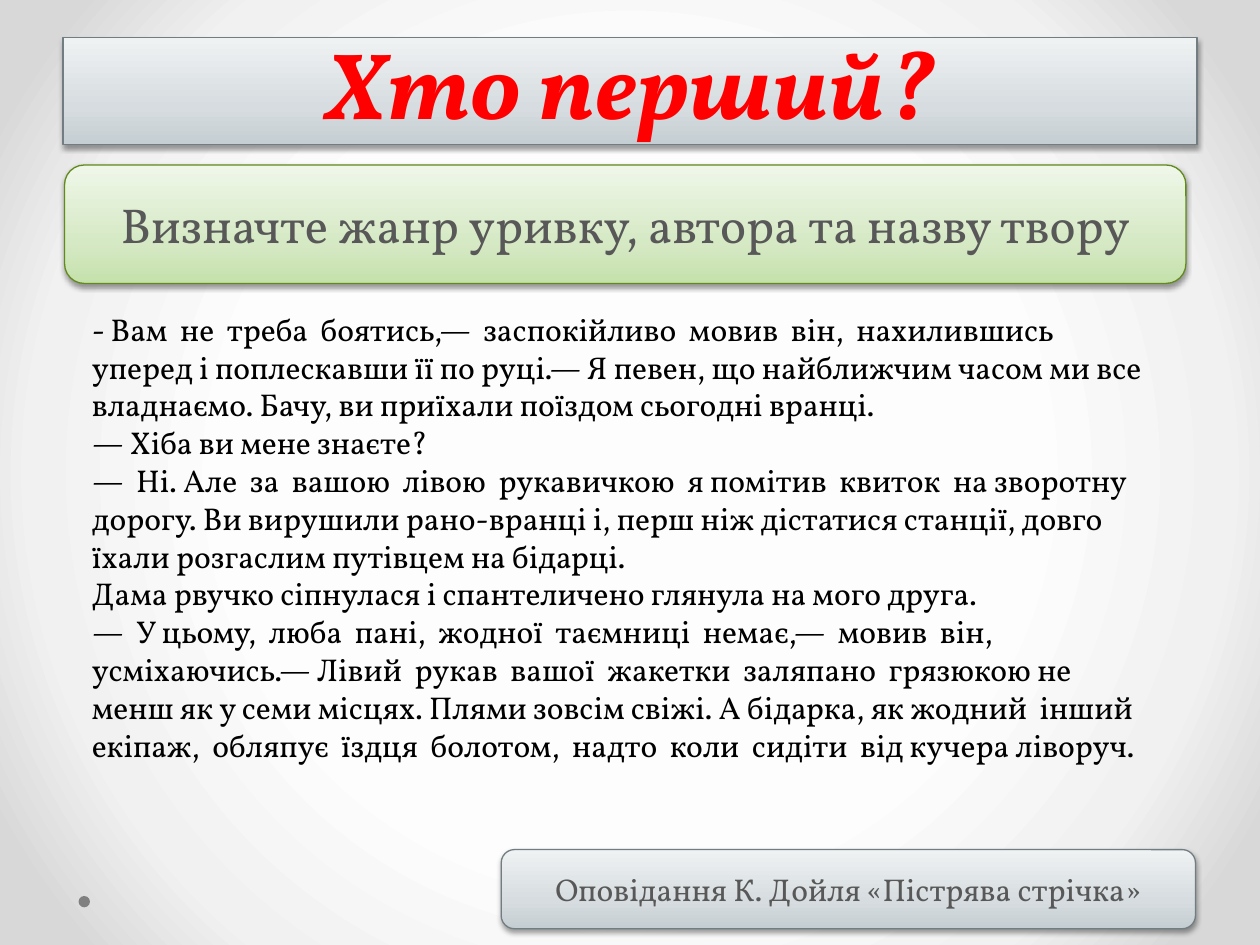
from dataclasses import dataclass
from lxml.etree import SubElement
from pptx import Presentation
from pptx.dml.color import RGBColor
from pptx.enum.shapes import MSO_SHAPE
from pptx.enum.text import MSO_ANCHOR, MSO_AUTO_SIZE, PP_ALIGN
from pptx.oxml.ns import qn
from pptx.util import Pt


@dataclass(frozen=True)
class Theme:
    font: str = "Vollkorn"
    title_size: int = 54
    task_size: int = 28
    body_size: int = 18
    red: str = "FF0000"
    grey: str = "585858"
    black: str = "000000"
    dot: str = "808080"
    backdrop: tuple = ((50, "FDFDFD"), (76, "F1F1F1"), (92, "D8D8D8"))
    steel: tuple = ((0, "C5CED2"), (35, "D6DCDF"), (100, "EFF2F3"))
    steel_line: str = "727D82"
    green: tuple = ((0, "C5E1AB"), (35, "D6E9C5"), (100, "EFF7E9"))
    green_line: str = "62891C"


T = Theme()

PASSAGE = [
    "- Вам  не  треба  боятись,—  заспокійливо  мовив  він,  нахилившись уперед і "
    "поплескавши її по руці.— Я певен, що найближчим часом ми все владнаємо. "
    "Бачу, ви приїхали поїздом сьогодні вранці.",
    "— Хіба ви мене знаєте?",
    "—  Ні. Але  за  вашою  лівою  рукавичкою  я помітив  квиток  на зворотну дорогу. "
    "Ви вирушили рано-вранці і, перш ніж дістатися станції, довго їхали розгаслим "
    "путівцем на бідарці.",
    "Дама рвучко сіпнулася і спантеличено глянула на мого друга.",
    "—  У цьому,  люба  пані,  жодної  таємниці  немає,—  мовив  він, усміхаючись.— "
    "Лівий  рукав  вашої  жакетки  заляпано  грязюкою не менш як у семи місцях. "
    "Плями зовсім свіжі. А бідарка, як жодний  інший  екіпаж,  обляпує  їздця  "
    "болотом,  надто  коли  сидіти  від кучера ліворуч.",
]


def add(parent, tag, **attrs):
    return SubElement(parent, qn(tag), {k: str(v) for k, v in attrs.items()})


def set_gradient(fill, element, stops, radial=False):
    """Gradient with any number of stops, upward or from the centre out."""
    fill.gradient()
    grad = element.find(".//" + qn("a:gradFill"))
    for child in list(grad):
        grad.remove(child)
    gs_list = add(grad, "a:gsLst")
    for pos, color in stops:
        add(add(gs_list, "a:gs", pos=pos * 1000), "a:srgbClr", val=color)
    if radial:
        focus = add(grad, "a:path", path="circle")
        add(focus, "a:fillToRect", **dict.fromkeys("ltrb", 50000))
    else:
        add(grad, "a:lin", ang=270 * 60000, scaled=0)


def place(shape, box):
    for name, value in zip(("left", "top", "width", "height"), box):
        setattr(shape, name, Pt(value))


def style_panel(sp, stops, line):
    """Gradient fill, thin outline and soft shadow below."""
    set_gradient(sp.fill, sp.element, stops)
    sp.line.color.rgb = RGBColor.from_string(line)
    sp.line.width = Pt(0.75)
    sp.shadow.inherit = False
    effects = sp.element.spPr.find(qn("a:effectLst"))
    shadow = add(effects, "a:outerShdw", blurRad=Pt(3.1), dist=Pt(1.6),
                 dir=90 * 60000, rotWithShape=0)
    add(add(shadow, "a:srgbClr", val="000000"), "a:alpha", val=38000)


def write(tf, texts, size, color, align, anchor, spacing=None, **font):
    tf.word_wrap = True
    tf.auto_size = MSO_AUTO_SIZE.NONE
    tf.vertical_anchor = anchor
    for i, text in enumerate(texts):
        p = tf.add_paragraph() if i else tf.paragraphs[0]
        p.alignment = align
        if spacing:
            p.line_spacing = Pt(spacing)
        r = p.add_run()
        r.text = text
        r.font.color.rgb = RGBColor.from_string(color)
        for name, value in dict(name=T.font, size=Pt(size), **font).items():
            setattr(r.font, name, value)


def add_title(s, box, text):
    sp = s.shapes.title
    place(sp, box)
    style_panel(sp, T.steel, T.steel_line)
    write(sp.text_frame, [text], T.title_size, T.red, PP_ALIGN.CENTER,
          MSO_ANCHOR.BOTTOM, spacing=58, bold=True, italic=True)


def add_panel(s, box, text, size, stops, line):
    sp = s.shapes.add_shape(MSO_SHAPE.ROUNDED_RECTANGLE, *map(Pt, box))
    style_panel(sp, stops, line)
    write(sp.text_frame, [text], size, T.grey, PP_ALIGN.CENTER, MSO_ANCHOR.MIDDLE)


def add_passage(s, box, texts):
    sp = s.shapes.add_textbox(*map(Pt, box))
    write(sp.text_frame, texts, T.body_size, T.black, PP_ALIGN.LEFT, MSO_ANCHOR.TOP)


def add_dot(s, box):
    sp = s.shapes.add_shape(MSO_SHAPE.OVAL, *map(Pt, box))
    sp.shadow.inherit = False
    sp.fill.solid()
    sp.fill.fore_color.rgb = RGBColor.from_string(T.dot)
    sp.line.fill.background()


def main():
    prs = Presentation()
    prs.slide_width, prs.slide_height = Pt(720), Pt(540)
    s = prs.slides.add_slide(prs.slide_layouts[5])
    set_gradient(s.background.fill, s.element, T.backdrop, radial=True)
    add_dot(s, (44.9, 512, 6.5, 6.5))
    add_title(s, (36, 21.6, 648, 61.2), "Хто перший?")
    add_panel(s, (36.9, 94.3, 640.8, 67.7), "Визначте жанр уривку, автора та назву твору",
              T.task_size, T.green, T.green_line)
    add_passage(s, (45.4, 173.5, 617.8, 290.9), PASSAGE)
    add_panel(s, (286.4, 485.5, 396.7, 45.2), "Оповідання К. Дойля «Пістрява стрічка»",
              T.body_size, T.steel, T.steel_line)
    prs.save("out.pptx")


if __name__ == "__main__":
    main()
